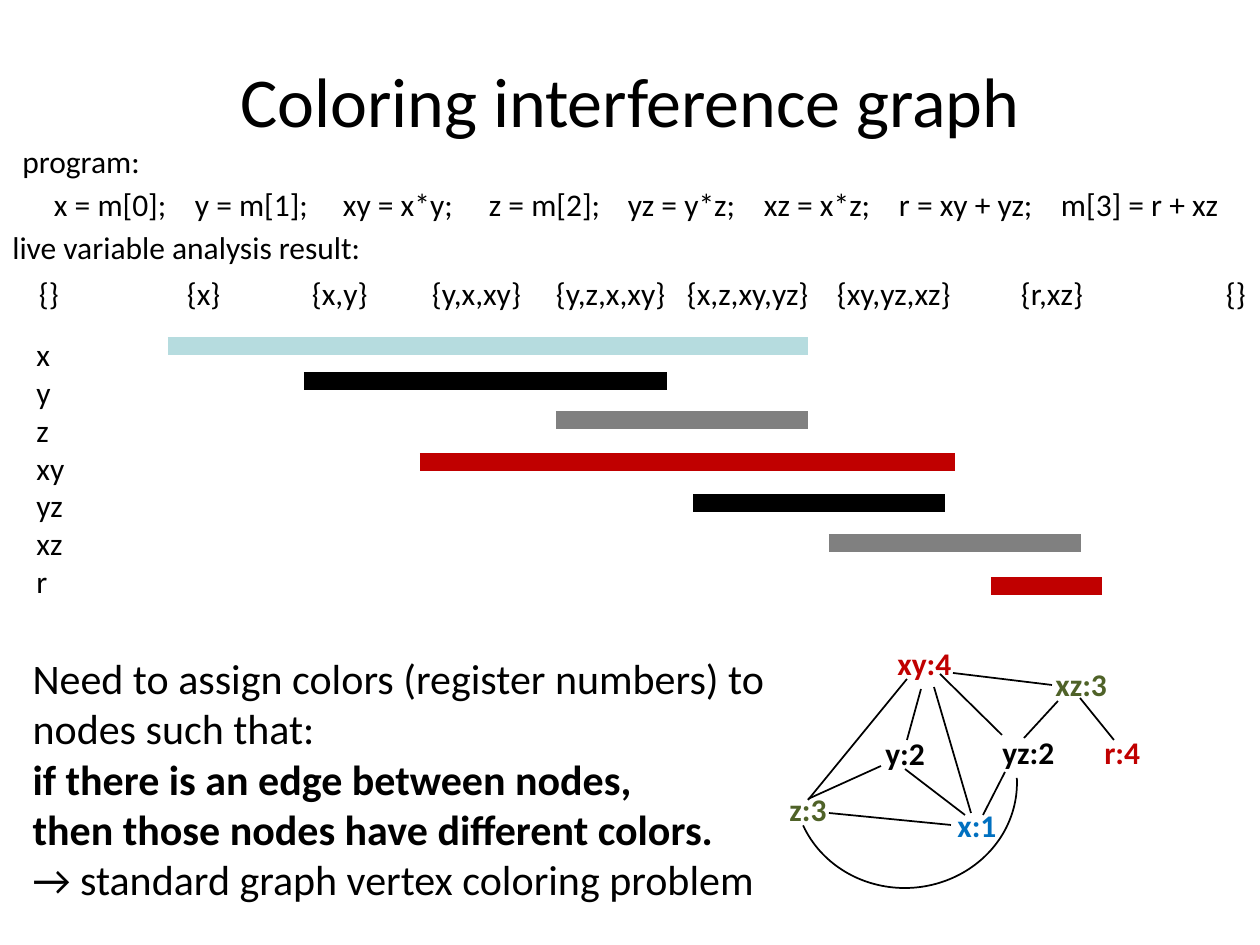
from lxml.etree import SubElement
from pptx import Presentation
from pptx.dml.color import RGBColor
from pptx.enum.shapes import MSO_CONNECTOR as CONNECTOR, MSO_SHAPE as SHAPE
from pptx.enum.text import MSO_ANCHOR as ANCHOR, MSO_AUTO_SIZE as AUTO, PP_ALIGN as ALIGN
from pptx.oxml.ns import qn
from pptx.util import Emu, Pt

PX_PER_INCH = 126
BLACK, RED, GRAY, GREEN = "000000", "C00000", "808080", "4F6228"
BLUE, TEAL = "0070C0", "B6DCDF"


def px(length):
    return Emu(round(length * 914400 / PX_PER_INCH))


def color(value):
    return RGBColor.from_string(value)


class SlideBuilder:
    """Holds the text style and the slide being filled."""

    def __init__(self, slide, font="Calibri", size=18):
        self.slide, self.font, self.size = slide, font, size

    def add_run(self, paragraph, text, size=None, bold=False, fill=BLACK):
        run = paragraph.add_run()
        run.text = text
        run.font.name = self.font
        run.font.size = Pt(size or self.size)
        run.font.bold = bold
        run.font.color.rgb = color(fill)

    def place(self, shape, left, top, width, height):
        shape.left, shape.top = px(left), px(top)
        shape.width, shape.height = px(width), px(height)

    def title(self, text, *box):
        shape = self.slide.shapes.title
        self.place(shape, *box)
        frame = shape.text_frame
        frame.auto_size, frame.vertical_anchor = AUTO.NONE, ANCHOR.MIDDLE
        frame.paragraphs[0].alignment = ALIGN.CENTER
        self.add_run(frame.paragraphs[0], text, 40)

    def body(self, paragraphs, *box):
        """Each paragraph is a list of (line, bold) pairs."""
        shape = self.slide.placeholders[1]
        self.place(shape, *box)
        frame = shape.text_frame
        frame.auto_size = AUTO.NONE
        for index, lines in enumerate(paragraphs):
            paragraph = frame.add_paragraph() if index else frame.paragraphs[0]
            paragraph.space_before = Pt(0)
            properties = paragraph._p.get_or_add_pPr()
            properties.set("marL", "0")
            properties.set("indent", "0")
            SubElement(properties, qn("a:buNone"))
            for number, (line, bold) in enumerate(lines):
                if number:
                    paragraph.add_line_break()
                self.add_run(paragraph, line, 24, bold)

    def text(self, lines, left, top, width, height=50, wrap=True, **style):
        shape = self.slide.shapes.add_textbox(px(left), px(top), px(width), px(height))
        frame = shape.text_frame
        frame.word_wrap = wrap
        for index, line in enumerate(lines):
            paragraph = frame.add_paragraph() if index else frame.paragraphs[0]
            self.add_run(paragraph, line, **style)
        return frame

    def tabbed_row(self, items, starts, top, width):
        """One line of text whose items begin at the given x positions."""
        frame = self.text(["\t".join(items)], starts[0] - 13, top, width)
        frame.margin_left, frame.margin_right = px(13), 0
        tabs = SubElement(frame.paragraphs[0]._p.get_or_add_pPr(), qn("a:tabLst"))
        for start in starts[1:]:
            SubElement(tabs, qn("a:tab"), pos=str(px(start - starts[0])), algn="l")

    def line(self, x1, y1, x2, y2, stroke=BLACK, weight=1):
        connector = self.slide.shapes.add_connector(
            CONNECTOR.STRAIGHT, px(x1), px(y1), px(x2), px(y2))
        connector.line.color.rgb = color(stroke)
        connector.line.width = Pt(weight)
        SubElement(connector._element.spPr, qn("a:effectLst"))

    def arc(self, left, top, width, height, rotation, adjustments):
        shape = self.slide.shapes.add_shape(
            SHAPE.ARC, px(left), px(top), px(width), px(height))
        shape.shadow.inherit = False
        shape.fill.background()
        shape.line.color.rgb = color(BLACK)
        shape.line.width = Pt(1)
        shape.rotation = rotation
        for index, value in enumerate(adjustments):
            shape.adjustments[index] = value


def main():
    presentation = Presentation()
    presentation.slide_width, presentation.slide_height = px(1260), px(945)
    builder = SlideBuilder(presentation.slides.add_slide(presentation.slide_layouts[1]))

    builder.title("Coloring interference graph", 63, 38, 1134, 123)

    # Program and the live variables between its statements
    builder.text(["program:"], 10, 136, 378)
    builder.tabbed_row(
        ["x = m[0];", "y = m[1];", "xy = x*y;", "z = m[2];", "yz = y*z;",
         "xz = x*z;", "r = xy + yz;", "m[3] = r + xz"],
        [54, 195, 343, 489, 628, 764, 899, 1061], 179, 1207)
    builder.text(["live variable analysis result:"], 0, 222, 378)
    builder.tabbed_row(
        ["{}", "{x}", "{x,y}", "{y,x,xy}", "{y,z,x,xy}", "{x,z,xy,yz}",
         "{xy,yz,xz}", "{r,xz}", "{}"],
        [39, 187, 312, 432, 556, 687, 837, 1021, 1226], 268, 1234)

    # Live ranges: variable, y, start, end, color
    ranges = [
        ("x", 346, 168, 808, TEAL),
        ("y", 381, 304, 667, BLACK),
        ("z", 420, 556, 808, GRAY),
        ("xy", 462, 420, 955, RED),
        ("yz", 503, 693, 945, BLACK),
        ("xz", 543, 829, 1081, GRAY),
        ("r", 586, 991, 1102, RED),
    ]
    builder.text([row[0] for row in ranges], 24, 329, 53, 280, wrap=False)
    for _, y, start, end, stroke in ranges:
        builder.line(start, y, end, y, stroke, 10)

    # Coloring rule
    builder.body([
        [("Need to assign colors (register numbers) to", False),
         ("nodes such that:", False),
         ("if there is an edge between nodes,", True),
         ("then those nodes have different colors.", True)],
        [("→ standard graph vertex coloring problem", False)],
    ], 20, 646, 769, 267)

    # Interference graph: nodes
    nodes = [
        ("y:2", 873, 728, 66, BLACK),
        ("yz:2", 990, 727, 78, BLACK),
        ("x:1", 945, 800, 66, BLUE),
        ("z:3", 777, 784, 63, GREEN),
        ("xz:3", 1043, 659, 78, GREEN),
        ("xy:4", 885, 638, 79, RED),
        ("r:4", 1092, 727, 62, RED),
    ]
    for label, left, top, width, fill in nodes:
        builder.text([label], left, top, width, wrap=False, bold=True, fill=fill)

    # Interference graph: edges
    edges = [
        (934, 687, 971, 813),    # xy - x
        (951, 825, 829, 813),    # x - z
        (905, 769, 965, 815),    # y - x
        (921, 689, 907, 740),    # xy - y
        (808, 799, 881, 766),    # z - y
        (907, 679, 808, 800),    # xy - z
        (940, 674, 1002, 735),   # xy - yz
        (1005, 772, 983, 815),   # yz - x
        (953, 673, 1052, 685),   # xy - xz
        (1058, 701, 1024, 738),  # xz - yz
        (1080, 698, 1114, 740),  # xz - r
    ]
    for edge in edges:
        builder.line(*edge)
    builder.arc(801, 672, 209, 223, 87.1, [162, 42.39])  # z - yz

    presentation.save("out.pptx")


if __name__ == "__main__":
    main()
